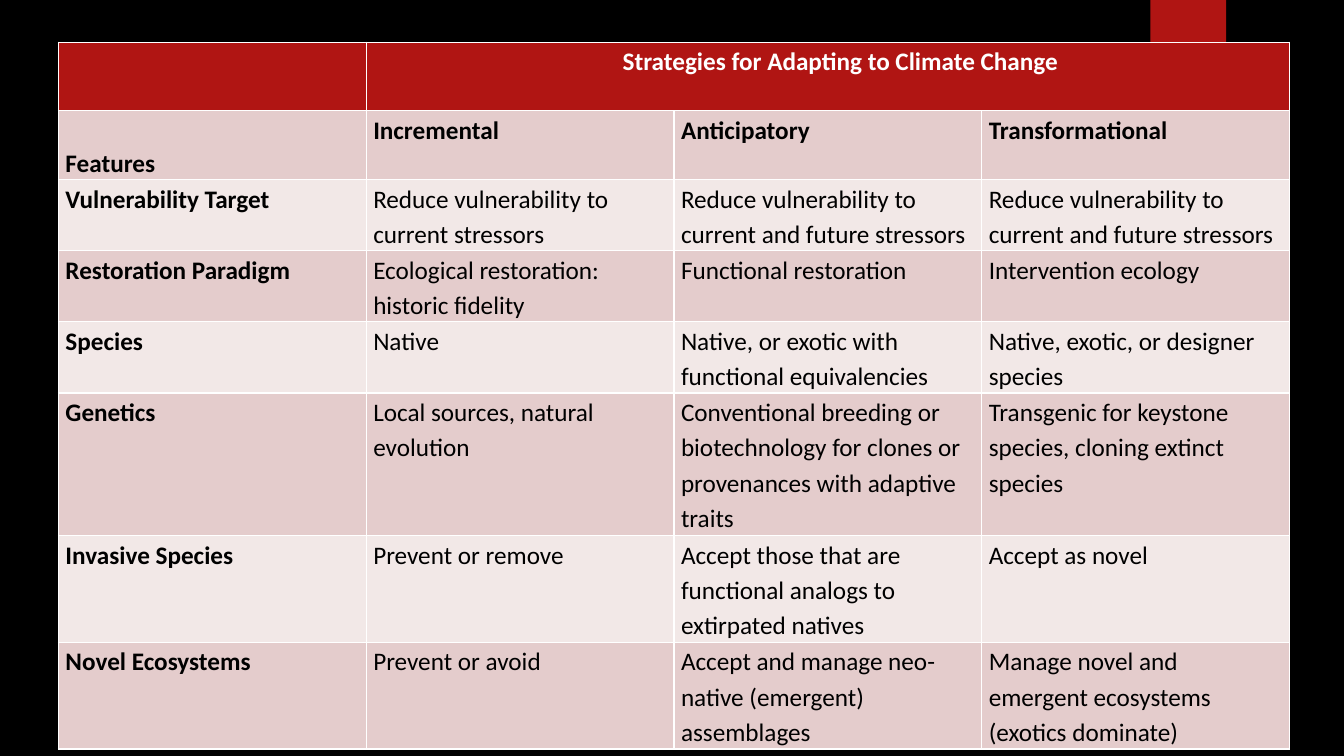
from pptx import Presentation
from pptx import util as u
from pptx.dml.color import RGBColor
from pptx.enum import shapes, text
from pptx.oxml import parse_xml
from pptx.oxml.ns import nsdecls

RED, ROSE, PALE, WHITE, BLACK = "B01513", "E4CCCC", "F2E8E7", "FFFFFF", "000000"
HEADER_ROW, LINE = 9.07, 4.71
LINES_PER_ROW = [2, 2, 2, 4, 3, 3]
STRATEGIES = [
    ["", "Strategies for Adapting to Climate Change", "", ""],
    ["Features", "Incremental", "Anticipatory", "Transformational"],
    ["Vulnerability Target", "Reduce vulnerability to current stressors",
     "Reduce vulnerability to current and future stressors",
     "Reduce vulnerability to current and future stressors"],
    ["Restoration Paradigm", "Ecological restoration: historic fidelity",
     "Functional restoration", "Intervention ecology"],
    ["Species", "Native", "Native, or exotic with functional equivalencies",
     "Native, exotic, or designer species"],
    ["Genetics", "Local sources, natural evolution",
     "Conventional breeding or biotechnology for clones or provenances with adaptive traits",
     "Transgenic for keystone species, cloning extinct species"],
    ["Invasive Species", "Prevent or remove",
     "Accept those that are functional analogs to extirpated natives", "Accept as novel"],
    ["Novel Ecosystems", "Prevent or avoid",
     "Accept and manage neo-native (emergent) assemblages",
     "Manage novel and emergent ecosystems (exotics dominate)"],
]


def paint(fill, color):
    """Fill a shape, cell, font or background with a solid hex colour."""
    fill.solid()
    fill.fore_color.rgb = RGBColor.from_string(color)


class Slide:
    """Draw styled elements placed by percentages of the slide's size."""

    def __init__(self, deck, background):
        self.width, self.height = deck.slide_width, deck.slide_height
        self.font, self.size = "Calibri", u.Pt(18)
        self.page = deck.slides.add_slide(deck.slide_layouts[6])
        paint(self.page.background.fill, background)

    def x(self, share):
        """Convert a percentage of the width to a length."""
        return round(self.width * share / 100)

    def y(self, share):
        """Convert a percentage of the height to a length."""
        return round(self.height * share / 100)

    def rectangle(self, left, top, width, height, color):
        """Add a plain filled rectangle."""
        box = self.page.shapes.add_shape(
            shapes.MSO_SHAPE.RECTANGLE, self.x(left), self.y(top), self.x(width), self.y(height))
        box.shadow.inherit = False
        paint(box.fill, color)
        box.line.fill.background()

    def cell(self, cell, words, fill, color, bold):
        """Write and style one table cell with thin white borders."""
        properties = cell._tc.get_or_add_tcPr()
        for side in "LRTB":
            properties.append(parse_xml(
                f'<a:ln{side} {nsdecls("a")} w="12700"><a:solidFill>'
                f'<a:srgbClr val="{WHITE}"/></a:solidFill></a:ln{side}>'))
        paint(cell.fill, fill)
        cell.margin_left = cell.margin_right = u.Inches(0.07)
        cell.margin_top = cell.margin_bottom = 0
        cell.text_frame.text = words
        para = cell.text_frame.paragraphs[0]
        para.line_spacing, para.space_after = 1.15, u.Pt(10)
        para.font.name, para.font.size, para.font.bold = self.font, self.size, bold
        for span in para.runs:
            span.font.name, span.font.size, span.font.bold = self.font, self.size, bold
            paint(span.font.fill, color)

    def table(self, left, top, width, heights, rows):
        """Add a banded table whose first row spans the columns after the first."""
        table = self.page.shapes.add_table(
            len(rows), len(rows[0]), self.x(left), self.y(top),
            self.x(width), self.y(sum(heights))).table
        for row, (height, words) in enumerate(zip(heights, rows)):
            table.rows[row].height = self.y(height)
            fill = RED if row == 0 else (PALE, ROSE)[row % 2]
            for column, word in enumerate(words):
                self.cell(table.cell(row, column), word, fill,
                          BLACK if row else WHITE, row < 2 or column == 0)
        heading = table.cell(0, 1)
        heading.merge(table.cell(0, len(rows[0]) - 1))
        para = heading.text_frame.paragraphs[0]
        para.alignment = text.PP_ALIGN.CENTER
        para._p.get_or_add_pPr().set("indent", str(u.Inches(0.25)))
        table.cell(1, 0).vertical_anchor = text.MSO_ANCHOR.BOTTOM


def main():
    """Build and save the deck."""
    deck = Presentation()
    deck.slide_width, deck.slide_height = u.Inches(13.33), u.Inches(7.5)
    slide = Slide(deck, BLACK)
    slide.rectangle(85.6, 0, 5.63, 16.67, RED)
    heights = [HEADER_ROW] * 2 + [LINE * lines for lines in LINES_PER_ROW]
    slide.table(4.35, 5.6, 91.6, heights, STRATEGIES)
    deck.save("out.pptx")


if __name__ == "__main__":
    main()
